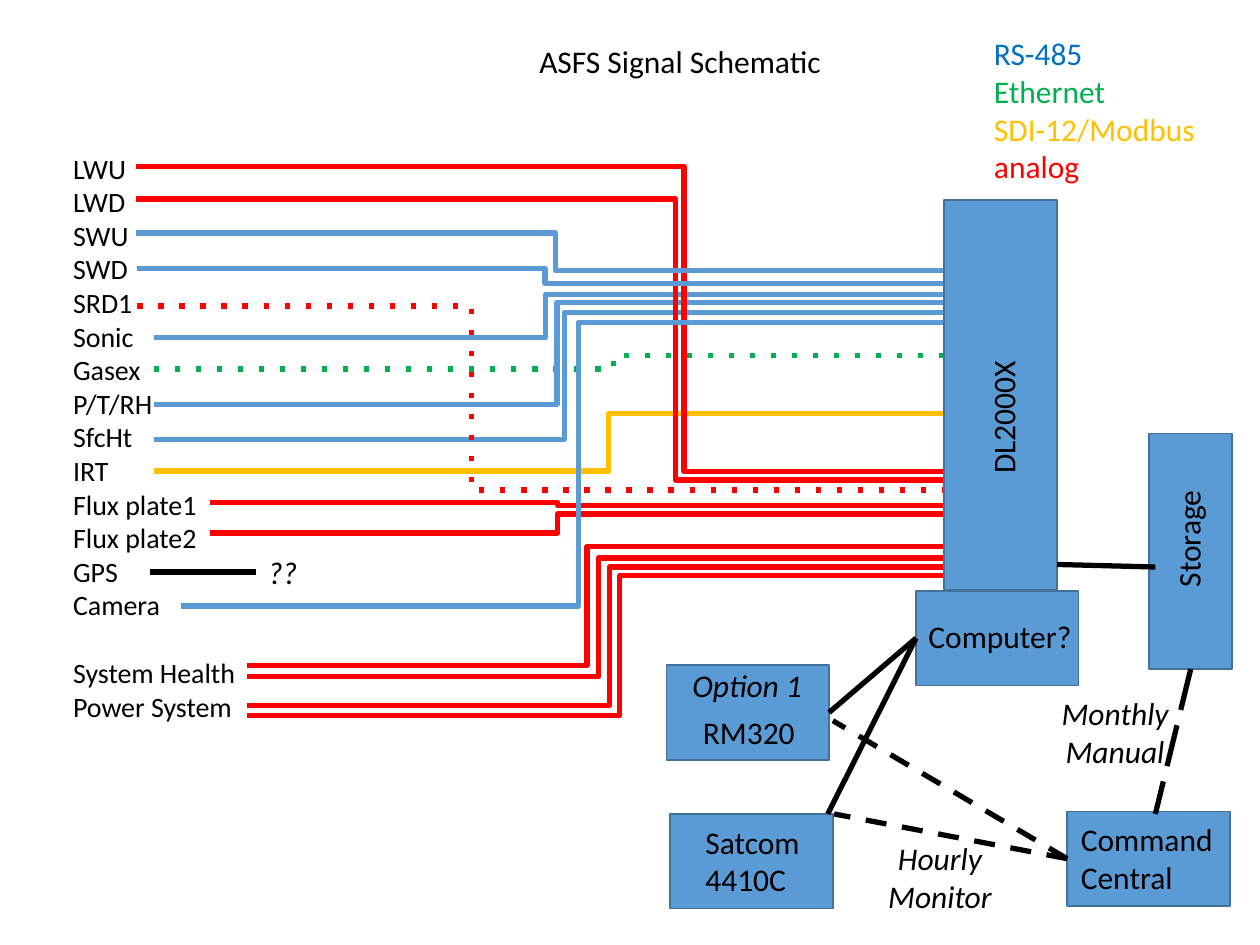
from lxml import etree
from pptx import Presentation
from pptx import util as u
from pptx.dml.color import RGBColor
from pptx.enum import dml, shapes, text
from pptx.oxml.ns import qn

# ---- Content: lengths are cells of a grid 100 columns wide and 75 rows high
COLS, ROWS = 100, 75
BLUE, RED, GREEN, GOLD, BLACK = "5B9BD5", "FF0000", "00B050", "FFC000", "000000"
EDGE = "42719B"

TITLE = ("ASFS Signal Schematic", (41.8, 2.8, 24.6, 4))
SIGNALS = ["LWU", "LWD", "SWU", "SWD", "SRD1", "Sonic", "Gasex", "P/T/RH", "SfcHt",
           "IRT", "Flux plate1", "Flux plate2", "GPS", "Camera",
           "System Health", "Power System"]
SIGNALS_AREA = (4.8, 11.5, 15.1, 46.8)
GROUP_START, GROUP_GAP = "System Health", 19.5

LEGEND = [("RS-485", "0070C0"), ("Ethernet", GREEN), ("SDI-12/Modbus", GOLD),
          ("analog", RED)]
LEGEND_AREA = (77.9, 2.2, 18.1, 13.1)

# Signal wires, back to front: start column, start row, bend column,
# end column, end row, colour, dash
WIRES = [
    (12.2, 26.8, 43.3, 77.5, 23.4, BLUE, None),   # Sonic
    (12.2, 34.9, 44.8, 77.5, 24.8, BLUE, None),   # SfcHt
    (12.2, 29.3, 48.7, 77.5, 28.2, GREEN, "dot"),  # Gasex
    (12.2, 37.4, 48.3, 77.5, 32.8, GOLD, None),   # IRT
    (12.2, 32.1, 44.2, 78.5, 24, BLUE, None),     # P/T/RH
    (16.7, 42.3, 44.3, 77.3, 40.8, RED, None),    # Flux plate2
    (16.7, 39.9, 44.3, 77.3, 40.1, RED, None),    # Flux plate1
    (19.6, 56.8, 49.2, 77.5, 45.7, RED, None),    # Power System
    (19.6, 56, 48.4, 77.3, 45, RED, None),
    (19.6, 52.8, 46.6, 74.9, 43.4, RED, None),    # System Health
    (19.6, 53.7, 47.5, 74.9, 44.3, RED, None),
    (10.8, 15.8, 53.6, 77.5, 38.1, RED, None),    # LWD
    (10.8, 13.2, 54.3, 77.3, 37.4, RED, None),    # LWU
    (10.8, 18.5, 44.1, 77.5, 21.5, BLUE, None),   # SWU
    (10.9, 21.3, 43.3, 77.5, 22.5, BLUE, None),   # SWD
    (10.9, 24.3, 37.4, 77.5, 38.9, RED, "dot"),   # SRD1
    (14.4, 48.1, 45.9, 77.5, 25.6, BLUE, None),   # Camera
]

DEVICES = {
    "radio": (52.9, 52.8, 12.9, 7.5),
    "computer": (72.7, 46.9, 12.9, 7.5),
    "storage": (91.2, 34.4, 6.6, 18.7),
    "logger": (74.9, 15.9, 9, 30.9),
    "satellite": (53.2, 64.6, 12.9, 7.5),
    "command": (84.7, 64.4, 12.9, 7.5),
}

# Links: start, end, dash, (device, side) joined at the start, and at the end
LINKS = [
    ((72.7, 50.5), (65.7, 64.6), None, ("computer", 1), None),
    ((72.7, 50.5), (65.8, 56.6), None, ("computer", 1), ("radio", 3)),
    ((83.9, 44.8), (91.7, 45), None, None, None),
    ((11.9, 45.4), (20.3, 45.4), None, None, None),
    ((84.8, 68.1), (66.2, 64.6), "dash", ("command", 1), None),
    ((84.8, 68.1), (66.1, 57.2), "dash", ("command", 1), None),
    ((94.5, 53.2), (91.7, 64.6), "long", ("storage", 2), None),
]

PLAIN = {}
NOTE = {"italic": True}
LABELS = [  # wording, area, rotation, font format, centred
    ("RM320", (54.8, 56.1, 11.9, 4), 0, PLAIN, False),
    ("Computer?", (72.7, 48.5, 13.8, 4), 0, PLAIN, False),
    ("Storage", (89.4, 40.7, 9.8, 4), 270, PLAIN, False),
    ("Option 1", (53.4, 52.4, 11.8, 4), 0, NOTE, True),
    ("??", (20.3, 43.4, 4.4, 4), 0, NOTE, False),
    ("DL2000X", (71.3, 28.3, 16.6, 4), 270, PLAIN, False),
    ("Satcom 4410C", (55, 64.8, 11.9, 7.1), 0, PLAIN, False),
    ("Command Central", (84.8, 64.6, 13.6, 7.1), 0, PLAIN, False),
    ("Monthly Manual", (82.6, 54.6, 11.8, 7.1), 0, NOTE, True),
    ("Hourly Monitor", (68.7, 66.1, 11.8, 7.1), 0, NOTE, True),
]

DASHES = {"dot": dml.MSO_LINE.ROUND_DOT, "dash": dml.MSO_LINE.DASH,
          "long": dml.MSO_LINE.LONG_DASH}
SYS_DOT = "dot"

prs = Presentation()
prs.slide_width, prs.slide_height = u.Inches(10), u.Inches(7.5)
slide = prs.slides.add_slide(prs.slide_layouts[1])


# ---- Helpers
def rgb(value):
    return RGBColor.from_string(value)


def x(col):
    return round(prs.slide_width * col / COLS)


def y(row):
    return round(prs.slide_height * row / ROWS)


def area(left, top, width, height):
    return x(left), y(top), x(width), y(height)


def write(holder, lines, size=18, colors=(), font=PLAIN, centred=False):
    """Fill a text frame with one paragraph for each line."""
    frame = holder.text_frame
    settings = {"word_wrap": True, "auto_size": text.MSO_AUTO_SIZE.NONE,
                "vertical_anchor": text.MSO_ANCHOR.TOP}
    for key, value in settings.items():
        setattr(frame, key, value)
    for i, line in enumerate(lines):
        para = frame.paragraphs[0] if i == 0 else frame.add_paragraph()
        para.alignment = text.PP_ALIGN.CENTER if centred else text.PP_ALIGN.LEFT
        para.space_before = u.Pt(GROUP_GAP if line == GROUP_START else 0)
        run = para.add_run()
        run.text = line
        for key, value in {"name": "Calibri", "size": u.Pt(size), **font}.items():
            setattr(run.font, key, value)
        run.font.color.rgb = rgb(colors[i] if colors else BLACK)


def move(holder, place):
    for key, value in zip(("left", "top", "width", "height"), area(*place)):
        setattr(holder, key, value)


def connect(kind, start, end, color, dash):
    line = slide.shapes.add_connector(kind, x(start[0]), y(start[1]), x(end[0]), y(end[1]))
    line.line.color.rgb = rgb(color)
    line.line.width = u.Pt(3)
    if dash:
        line.line.dash_style = DASHES[dash]
        if dash == SYS_DOT:
            line._element.spPr.find(".//" + qn("a:prstDash")).set("val", "dot")
    etree.SubElement(line._element.spPr, qn("a:effectLst"))
    return line


# ---- Title and signal list
title, signals = slide.placeholders
move(title, TITLE[1])
write(title, [TITLE[0]])
move(signals, SIGNALS_AREA)
write(signals, SIGNALS, size=16)
for para in signals.text_frame.paragraphs:
    props = para._p.get_or_add_pPr()
    props.set("marL", "0")
    props.set("indent", "0")
    etree.SubElement(props, qn("a:buNone"))

# ---- Legend
legend = slide.shapes.add_textbox(*area(*LEGEND_AREA))
write(legend, [name for name, _ in LEGEND], colors=[color for _, color in LEGEND])

# ---- Signal wires
for x0, y0, bend, x1, y1, color, dash in WIRES:
    wire = connect(shapes.MSO_CONNECTOR.ELBOW, (x0, y0), (x1, y1), color, dash)
    guides = wire._element.spPr.find(qn("a:prstGeom")).get_or_add_avLst()
    share = round((bend - x0) / (x1 - x0) * 100000)
    etree.SubElement(guides, qn("a:gd"), name="adj1", fmla=f"val {share}")

# ---- Devices
boxes = {}
for device, place in DEVICES.items():
    box = slide.shapes.add_shape(shapes.MSO_SHAPE.RECTANGLE, *area(*place))
    box.shadow.inherit = False
    box.fill.solid()
    box.fill.fore_color.rgb = rgb(BLUE)
    box.line.color.rgb = rgb(EDGE)
    box.line.width = u.Pt(1)
    boxes[device] = box

# ---- Links between devices
for start, end, dash, joined_start, joined_end in LINKS:
    link = connect(shapes.MSO_CONNECTOR.STRAIGHT, start, end, BLACK, dash)
    if joined_start:
        link.begin_connect(boxes[joined_start[0]], joined_start[1])
    if joined_end:
        link.end_connect(boxes[joined_end[0]], joined_end[1])

# ---- Labels
for wording, place, turn, font, centred in LABELS:
    label = slide.shapes.add_textbox(*area(*place))
    label.rotation = turn
    write(label, [wording], font=font, centred=centred)

prs.save("out.pptx")
